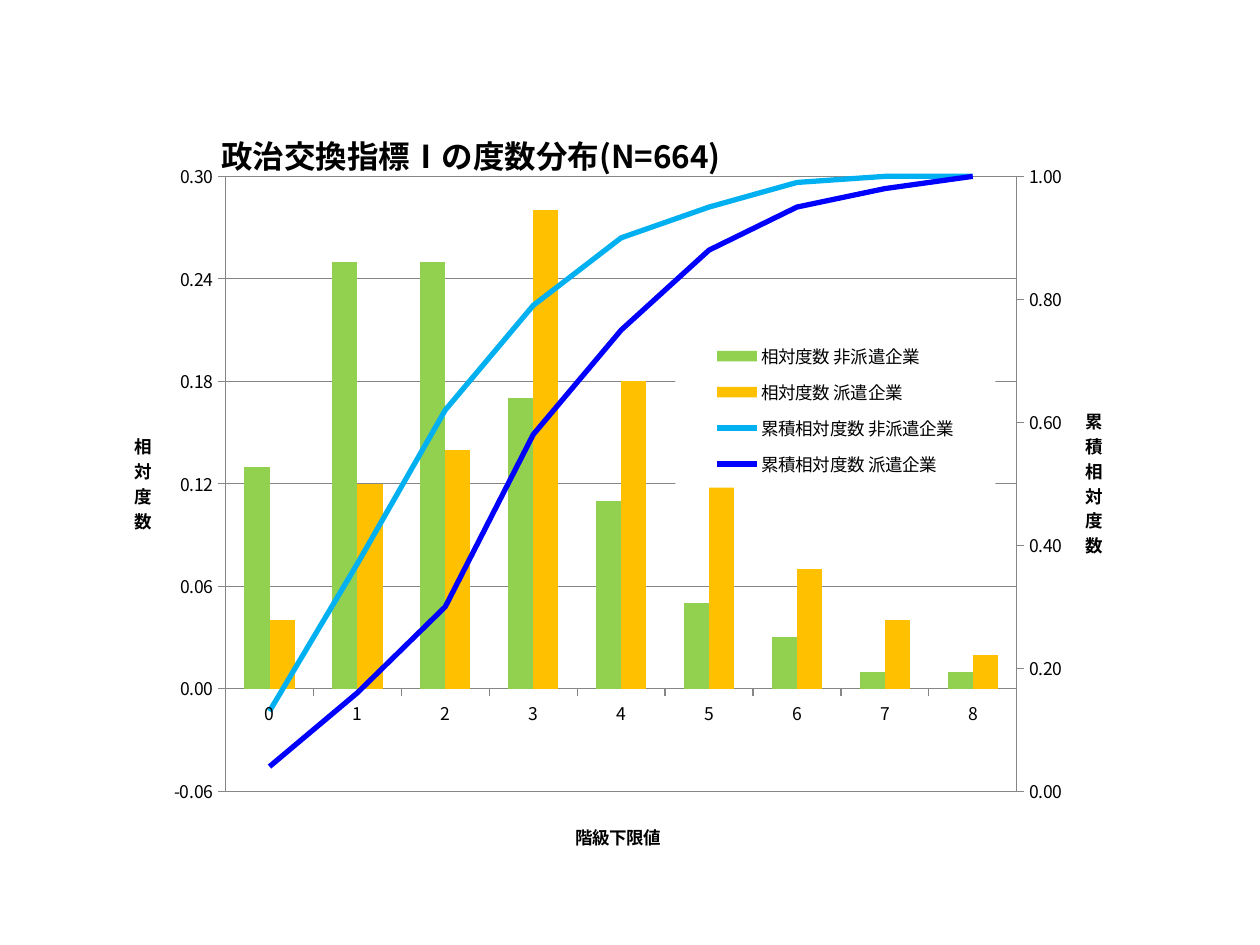
import copy
import pptx
import pptx.chart.axis
import pptx.chart.data
import pptx.dml.color
import pptx.enum.chart
import pptx.oxml
import pptx.oxml.ns
import pptx.util

Inches, Pt = pptx.util.Inches, pptx.util.Pt
enum, qn = pptx.enum.chart, pptx.oxml.ns.qn
NS = pptx.oxml.ns.nsdecls("c", "a")

# Content
FONT = "Noto Sans CJK JP"
GREY = "868686"
WIDE, HIGH = 8.05, 5.94  # chart size in inches
TITLE = "政治交換指標Ⅰの度数分布(N=664)"
CATS = [str(n) for n in range(9)]
BARS = [
    ("相対度数 非派遣企業", "92D050",
     (0.13, 0.25, 0.25, 0.17, 0.11, 0.05, 0.03, 0.01, 0.01)),
    ("相対度数 派遣企業", "FFC000",
     (0.04, 0.12, 0.14, 0.28, 0.18, 0.12, 0.07, 0.04, 0.02)),
]
LINES = [
    ("累積相対度数 非派遣企業", "00B0F0",
     (0.13, 0.37, 0.62, 0.79, 0.9, 0.95, 0.99, 1, 1)),
    ("累積相対度数 派遣企業", "0000FF",
     (0.04, 0.16, 0.3, 0.58, 0.75, 0.88, 0.95, 0.98, 1)),
]


def rgb(code):
    return pptx.dml.color.RGBColor.from_string(code)


def place(node, at, x, y, w=None, h=None, inner=False):
    """Lay out a chart part, in inches from the chart's corner."""
    for old in node.findall(qn("c:layout")):
        node.remove(old)
    rows = [("xMode", "edge"), ("yMode", "edge"), ("x", x / WIDE), ("y", y / HIGH)]
    if inner:
        rows.insert(0, ("layoutTarget", "inner"))
    if w:
        rows += [("w", w / WIDE), ("h", h / HIGH)]
    body = "".join(f'<c:{tag} val="{val}"/>' for tag, val in rows)
    node.insert(at, pptx.oxml.parse_xml(
        f"<c:layout {NS}><c:manualLayout>{body}</c:manualLayout></c:layout>"))


def write(owner, text, x, y, size=10, stack=False):
    """Write a bold title for the chart or one of its axes."""
    title = owner.chart_title if hasattr(owner, "chart_title") else owner.axis_title
    frame = title.text_frame
    frame.text = text
    font = frame.paragraphs[0].runs[0].font
    font.name, font.size, font.bold = FONT, Pt(size), True
    font.color.rgb = rgb("000000")
    node = title._element
    body = node.find(".//" + qn("a:bodyPr"))
    body.set("rot", "0")
    body.set("vert", "wordArtVertRtl" if stack else "horz")
    place(node, 1, x, y)


def scale(axis, low, high, step):
    axis.minimum_scale, axis.maximum_scale = low, high
    axis.major_unit = step


prs = pptx.Presentation()
prs.slide_width, prs.slide_height = Inches(10), Inches(7.5)
slide = prs.slides.add_slide(prs.slide_layouts[6])

# Chart with all series as columns
data = pptx.chart.data.CategoryChartData(number_format="0.00")
data.categories = CATS
for name, _, vals in BARS + LINES:
    data.add_series(name, vals)
chart = slide.shapes.add_chart(
    enum.XL_CHART_TYPE.COLUMN_CLUSTERED, Inches(0.94), Inches(0.94),
    Inches(WIDE), Inches(HIGH), data).chart
chart.font.name, chart.font.size = FONT, Pt(10)
chart.font.color.rgb = rgb("000000")
plot = chart.plots[0]
plot.gap_width, plot.overlap = 150, 0
plot.vary_by_categories = False

# Main axes
cat, val = chart.category_axis, chart.value_axis
for axis in (cat, val):
    axis.major_tick_mark = enum.XL_TICK_MARK.OUTSIDE
    axis.minor_tick_mark = enum.XL_TICK_MARK.NONE
    axis.format.line.color.rgb = rgb(GREY)
    axis.format.line.width = Pt(0.75)
cat.tick_label_position = enum.XL_TICK_LABEL_POSITION.NEXT_TO_AXIS
scale(val, -0.06, 0.3, 0.06)
val.tick_labels.number_format = "0.00"
val.tick_labels.number_format_is_linked = False

# Second pair of axes, copied before the main ones get titles and grid
val.has_major_gridlines = False
pair = [copy.deepcopy(axis._element) for axis in (cat, val)]
ids = ["5001", "5002"]
for node, own, other in zip(pair, ids, reversed(ids)):
    node.find(qn("c:axId")).set("val", own)
    node.find(qn("c:crossAx")).set("val", other)
    val._element.addnext(node)
pptx.chart.axis.CategoryAxis(pair[0]).visible = False
right = pptx.chart.axis.ValueAxis(pair[1])
scale(right, 0, 1, 0.2)
pair[1].find(qn("c:axPos")).set("val", "r")
pair[1].find(qn("c:crosses")).set("val", "max")

val.has_major_gridlines = True
val.major_gridlines.format.line.color.rgb = rgb(GREY)
val.major_gridlines.format.line.width = Pt(0.75)

# Move the cumulative series to a line plot on the second axes
bar = plot._element
line = pptx.oxml.parse_xml(
    f'<c:lineChart {NS}><c:grouping val="standard"/><c:varyColors val="0"/>'
    '<c:marker val="1"/>'
    + "".join(f'<c:axId val="{n}"/>' for n in ids) + "</c:lineChart>")
for spot, node in enumerate(bar.findall(qn("c:ser"))[len(BARS):], 2):
    for flag in node.findall(qn("c:invertIfNegative")):
        node.remove(flag)
    line.insert(spot, node)
bar.addnext(line)

for item, (_, color, _) in zip(chart.plots[0].series, BARS):
    item.format.fill.solid()
    item.format.fill.fore_color.rgb = rgb(color)
for item, (_, color, _) in zip(chart.plots[1].series, LINES):
    item.format.line.color.rgb = rgb(color)
    item.format.line.width = Pt(3)
    item.marker.style = enum.XL_MARKER_STYLE.NONE
    item.smooth = False

# Titles
write(chart, TITLE, 0.77, 0.03, size=18)
write(cat, "階級下限値", 3.6, 5.56)
write(val, "相対度数", 0.1, 2.46, stack=True)
write(right, "累積相対度数", 7.65, 2.26, stack=True)

# Legend on white, over the plot
chart.has_legend = True
chart.legend.position = enum.XL_LEGEND_POSITION.RIGHT
chart.legend.include_in_layout = True
chart.legend.font.size = Pt(10)
box = chart.legend._element
place(box, 1, 4.42, 1.7, 2.54, 1.23)
box.find(qn("c:overlay")).addnext(pptx.oxml.parse_xml(
    f'<c:spPr {NS}><a:solidFill><a:srgbClr val="FFFFFF"/></a:solidFill>'
    "<a:ln><a:noFill/></a:ln></c:spPr>"))
place(bar.getparent(), 0, 0.85, 0.46, 6.28, 4.88, inner=True)

# East Asian letters use the same font
for latin in list(chart._chartSpace.iter(qn("a:latin"))):
    latin.addnext(pptx.oxml.parse_xml(f'<a:ea {NS} typeface="{FONT}"/>'))

prs.save("out.pptx")
